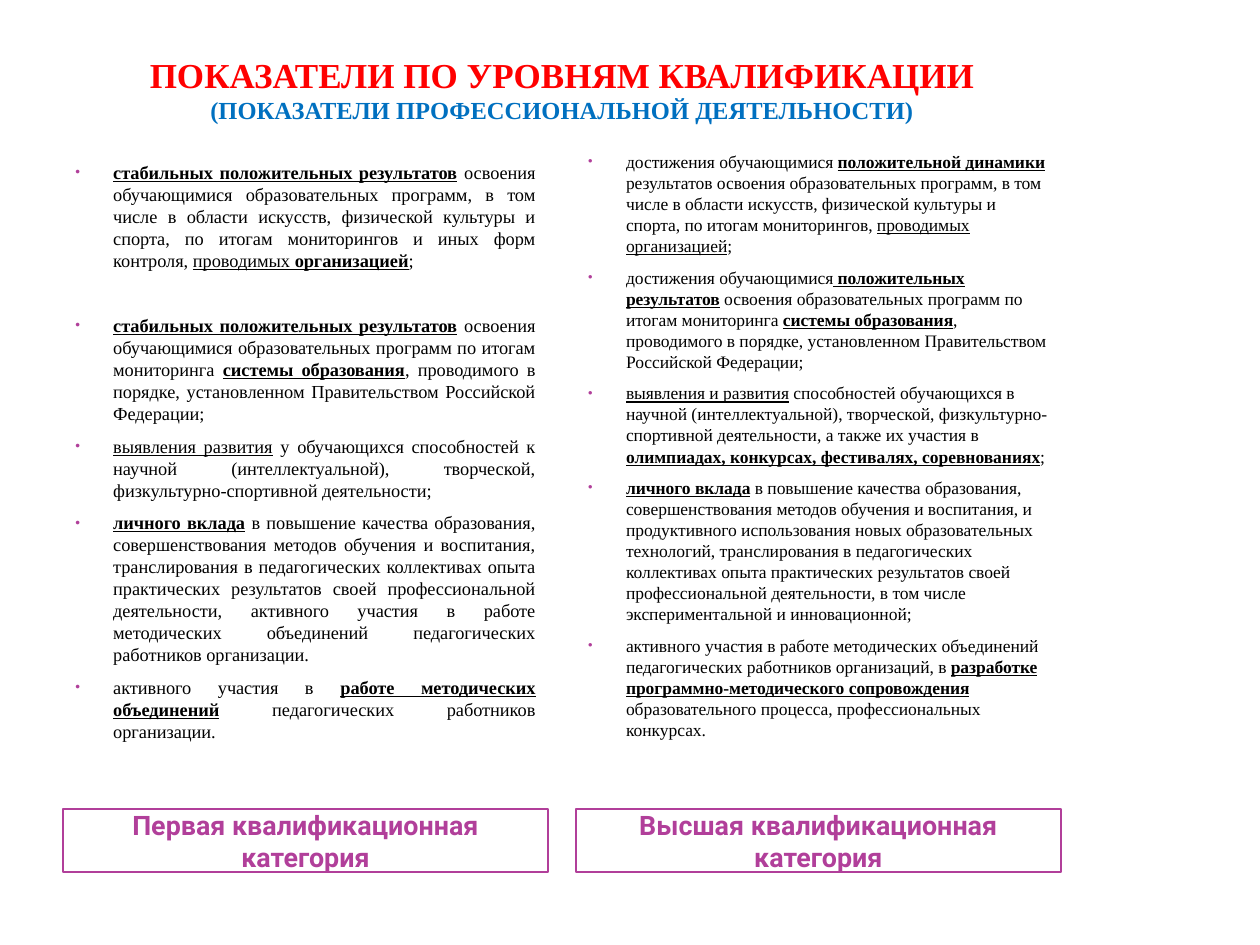
from lxml import etree
from pptx import Presentation
from pptx import util as u
from pptx.dml.color import RGBColor
from pptx.enum import shapes, text
from pptx.oxml.ns import qn

RED = RGBColor(0xFF, 0x00, 0x00)
BLUE = RGBColor(0x00, 0x70, 0xC0)
PLUM = RGBColor(0xB1, 0x3F, 0x9A)
BLACK = RGBColor(0x00, 0x00, 0x00)
SERIF, SANS = "Times New Roman", "Roboto"
ALIGN = text.PP_ALIGN
COLS, WIDTH = (0.5, 4.57), 3.85

# Run styles
PLAIN = {}
LINE = {"underline": True}
BOLD = {"bold": True, "underline": True}

FIRST = [
    [("стабильных положительных результатов", BOLD),
     (" освоения обучающимися образовательных программ, в том числе в области искусств, "
      "физической культуры и спорта, по итогам мониторингов и иных форм контроля, ", PLAIN),
     ("проводимых ", LINE), ("организацией", BOLD), (";", PLAIN)],
    [("стабильных положительных результатов", BOLD),
     (" освоения обучающимися образовательных программ по итогам мониторинга ", PLAIN),
     ("системы образования", BOLD),
     (", проводимого в порядке, установленном Правительством Российской Федерации;", PLAIN)],
    [("выявления развития", LINE),
     (" у обучающихся способностей к научной (интеллектуальной), творческой, "
      "физкультурно-спортивной деятельности;", PLAIN)],
    [("личного вклада", BOLD),
     (" в повышение качества образования, совершенствования методов обучения и воспитания, "
      "транслирования в педагогических коллективах опыта практических результатов своей "
      "профессиональной деятельности, активного участия в работе методических объединений "
      "педагогических работников организации.", PLAIN)],
    [("активного участия в ", PLAIN), ("работе методических объединений", BOLD),
     (" педагогических работников организации.", PLAIN)],
]
HIGH = [
    [("достижения обучающимися ", PLAIN), ("положительной динамики", BOLD),
     (" результатов освоения образовательных программ, в том числе в области искусств, "
      "физической культуры и спорта, по итогам мониторингов, ", PLAIN),
     ("проводимых организацией", LINE), (";", PLAIN)],
    [("достижения обучающимися", PLAIN), (" ", LINE), ("положительных результатов", BOLD),
     (" освоения образовательных программ по итогам мониторинга ", PLAIN),
     ("системы образования", BOLD),
     (", проводимого в порядке, установленном Правительством Российской Федерации;", PLAIN)],
    [("выявления и развития", LINE),
     (" способностей обучающихся в научной (интеллектуальной), творческой, "
      "физкультурно-спортивной деятельности, а также их участия в ", PLAIN),
     ("олимпиадах, конкурсах, фестивалях, соревнованиях", BOLD), (";", PLAIN)],
    [("личного вклада", BOLD),
     (" в повышение качества образования, совершенствования методов обучения и воспитания, "
      "и продуктивного использования новых образовательных технологий, транслирования в "
      "педагогических коллективах опыта практических результатов своей профессиональной "
      "деятельности, в том числе экспериментальной и инновационной;", PLAIN)],
    [("активного участия в работе методических объединений педагогических работников "
      "организаций, в ", PLAIN),
     ("разработке программно-методического сопровождения", BOLD),
     (" образовательного процесса, профессиональных конкурсах.", PLAIN)],
]


def put(obj, **vals):
    for name, val in vals.items():
        setattr(obj, name, val)


def write(par, words, size, face, color, **style):
    run = par.add_run()
    run.text = words
    put(run.font, size=u.Pt(size), name=face, **style)
    run.font.color.rgb = color


def area(slide, left, top, width, height):
    box = slide.shapes.add_textbox(*map(u.Inches, (left, top, width, height)))
    box.text_frame.word_wrap = True
    return box.text_frame


def bullet(par):
    props = par._p.get_or_add_pPr()
    props.set("marL", str(u.Inches(0.3)))
    props.set("indent", str(-u.Inches(0.3)))
    tint = etree.SubElement(props, qn("a:buClr"))
    etree.SubElement(tint, qn("a:srgbClr"), val=str(PLUM))
    etree.SubElement(props, qn("a:buSzPct"), val="73000")
    etree.SubElement(props, qn("a:buFont"), typeface="Arial")
    etree.SubElement(props, qn("a:buChar"), char="•")


def title(slide):
    frame = area(slide, 0.5, 0.35, 7.92, 0.64)
    put(frame, vertical_anchor=text.MSO_ANCHOR.BOTTOM, margin_top=0, margin_bottom=0,
        margin_left=u.Inches(0.05), margin_right=u.Inches(0.05))
    par = frame.paragraphs[0]
    par.alignment = ALIGN.CENTER
    write(par, "ПОКАЗАТЕЛИ ПО УРОВНЯМ КВАЛИФИКАЦИИ", 20, SERIF, RED, bold=True)
    par.add_line_break()
    write(par, "(ПОКАЗАТЕЛИ ПРОФЕССИОНАЛЬНОЙ ДЕЯТЕЛЬНОСТИ)", 14, SERIF, BLUE, bold=True)


def items(slide, left, top, height, rows, size, align, gaps):
    frame = area(slide, left, top, WIDTH, height)
    for num, row in enumerate(rows):
        par = frame.add_paragraph() if num else frame.paragraphs[0]
        bullet(par)
        par.alignment = align
        if num:
            par.space_before = u.Pt(gaps.get(num, 6))
        for words, style in row:
            write(par, words, size, SERIF, BLACK, **style)


def label(slide, left, words):
    box = slide.shapes.add_shape(shapes.MSO_SHAPE.RECTANGLE,
                                 *map(u.Inches, (left, 6.42, WIDTH, 0.5)))
    box.shadow.inherit = False
    box.fill.background()
    box.line.color.rgb = PLUM
    box.line.width = u.Pt(1)
    put(box.text_frame, word_wrap=True, vertical_anchor=text.MSO_ANCHOR.MIDDLE)
    par = box.text_frame.paragraphs[0]
    par.alignment = ALIGN.CENTER
    write(par, words, 15.3, SANS, PLUM, bold=True)


def main():
    deck = Presentation()
    put(deck, slide_width=u.Inches(10), slide_height=u.Inches(7.5))
    slide = deck.slides.add_slide(deck.slide_layouts[6])

    title(slide)

    # Category names under the columns
    for left, name in zip(COLS, ("Первая", "Высшая")):
        label(slide, left, f"{name} квалификационная категория")

    # Indicator lists, with a wider gap after the first item on the left
    items(slide, COLS[0], 1.23, 5.14, FIRST, 10.5, ALIGN.JUSTIFY, {1: 24.5})
    items(slide, COLS[1], 1.15, 5.2, HIGH, 10, ALIGN.LEFT, {})

    deck.save("out.pptx")


if __name__ == "__main__":
    main()
